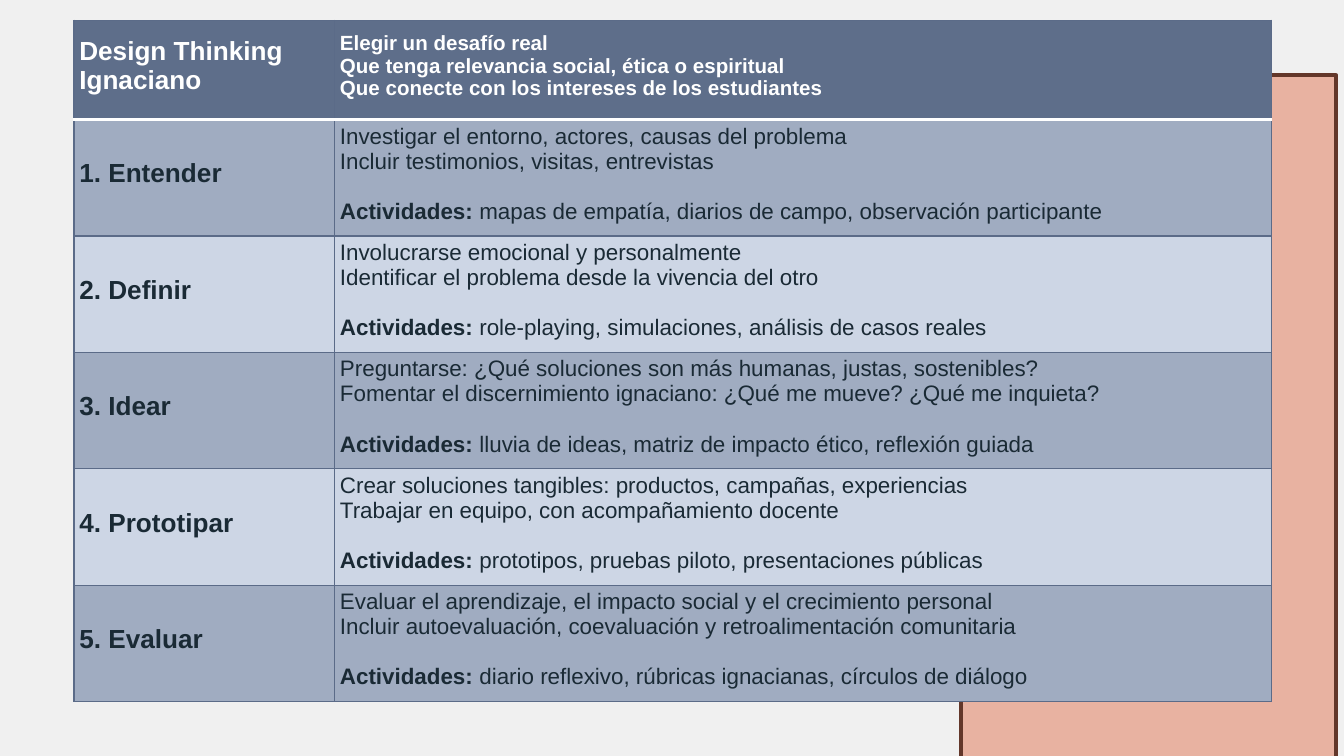
from lxml.etree import SubElement
from pptx import Presentation
from pptx.dml.color import RGBColor
from pptx.enum.shapes import MSO_SHAPE
from pptx.enum.text import MSO_ANCHOR
from pptx.oxml.ns import qn
from pptx.util import Inches, Pt

HEADER = ("Design Thinking Ignaciano", [
    "Elegir un desafío real",
    "Que tenga relevancia social, ética o espiritual",
    "Que conecte con los intereses de los estudiantes",
])
# Phase, two guidelines, activities
PHASES = [
    ("1. Entender",
     ["Investigar el entorno, actores, causas del problema",
      "Incluir testimonios, visitas, entrevistas"],
     "mapas de empatía, diarios de campo, observación participante"),
    ("2. Definir",
     ["Involucrarse emocional y personalmente",
      "Identificar el problema desde la vivencia del otro"],
     "role-playing, simulaciones, análisis de casos reales"),
    ("3. Idear",
     ["Preguntarse: ¿Qué soluciones son más humanas, justas, sostenibles?",
      "Fomentar el discernimiento ignaciano: ¿Qué me mueve? ¿Qué me inquieta?"],
     "lluvia de ideas, matriz de impacto ético, reflexión guiada"),
    ("4. Prototipar",
     ["Crear soluciones tangibles: productos, campañas, experiencias",
      "Trabajar en equipo, con acompañamiento docente"],
     "prototipos, pruebas piloto, presentaciones públicas"),
    ("5. Evaluar",
     ["Evaluar el aprendizaje, el impacto social y el crecimiento personal",
      "Incluir autoevaluación, coevaluación y retroalimentación comunitaria"],
     "diario reflexivo, rúbricas ignacianas, círculos de diálogo"),
]


def rgb(value):
    return RGBColor.from_string(value)


def add_text(p, text, size=12, color="1A2A35", bold=False, font="Arial"):
    r = p.add_run()
    r.text = text
    r.font.name, r.font.size, r.font.bold = font, Pt(size), bold
    r.font.color.rgb = rgb(color)


class Deck:
    BACKGROUND, HEAD, WHITE = "F0F0F0", "5E6E8A", "FFFFFF"
    BANDS = ("A0ACC1", "CDD6E5")
    GRID = ("5B6B88", 0.75)
    RULE = (WHITE, 2)

    def __init__(self, width, height):
        self.prs = Presentation()
        self.prs.slide_width, self.prs.slide_height = Inches(width), Inches(height)
        self.s = self.prs.slides.add_slide(self.prs.slide_layouts[6])
        fill = self.s.background.fill
        fill.solid()
        fill.fore_color.rgb = rgb(self.BACKGROUND)

    def panel(self, x, y, w, h, fill, opacity, line, width):
        sp = self.s.shapes.add_shape(MSO_SHAPE.PARALLELOGRAM,
                                     Inches(x), Inches(y), Inches(w), Inches(h))
        sp.adjustments[0] = 0
        sp.shadow.inherit = False
        sp.fill.solid()
        sp.fill.fore_color.rgb = rgb(fill)
        color = sp.fill._xPr.find(qn("a:solidFill"))[0]
        SubElement(color, qn("a:alpha"), val=str(opacity * 1000))
        sp.line.color.rgb = rgb(line)
        sp.line.width = Pt(width)

    def table(self, x, y, cols, rows):
        table = self.s.shapes.add_table(len(rows), len(cols), Inches(x), Inches(y),
                                        Inches(sum(cols)), Inches(sum(rows))).table
        for column, width in zip(table.columns, cols):
            column.width = Inches(width)
        for row, height in zip(table.rows, rows):
            row.height = Inches(height)
        return table

    def cell(self, cell, fill, top=GRID, bottom=GRID):
        cell.vertical_anchor = MSO_ANCHOR.MIDDLE
        cell.margin_left = cell.margin_right = Inches(0.04)
        cell.margin_top, cell.margin_bottom = Inches(0.03), Inches(0.09)
        tc_pr = cell._tc.get_or_add_tcPr()
        borders = {"L": self.GRID, "R": self.GRID, "T": top, "B": bottom}
        for side, (color, width) in borders.items():
            ln = SubElement(tc_pr, qn(f"a:ln{side}"), w=str(Pt(width)))
            SubElement(SubElement(ln, qn("a:solidFill")), qn("a:srgbClr"), val=color)
        cell.fill.solid()
        cell.fill.fore_color.rgb = rgb(fill)

    def lines(self, cell, texts, **style):
        tf = cell.text_frame
        for i, text in enumerate(texts):
            p = tf.add_paragraph() if i else tf.paragraphs[0]
            add_text(p, text, **style)


def main():
    # Widescreen, 16:9
    deck = Deck(10, 10 * 9 / 16)

    # Side panel
    deck.panel(7.15, 0.56, 2.79, 5.67, "E37E5F", 54, "63372A", 2)

    # Table header
    table = deck.table(0.55, 0.15, [1.94, 6.97], [0.74] + [0.86] * len(PHASES))
    title, goals = HEADER
    for col, (texts, size) in enumerate([([title], 14), (goals, 11)]):
        cell = table.cell(0, col)
        deck.cell(cell, deck.HEAD, bottom=deck.RULE)
        deck.lines(cell, texts, size=size, color=deck.WHITE, bold=True)

    # One row per phase
    for row, (phase, guidelines, activities) in enumerate(PHASES, 1):
        name, detail = table.cell(row, 0), table.cell(row, 1)
        for cell in (name, detail):
            deck.cell(cell, deck.BANDS[(row - 1) % 2],
                      top=deck.RULE if row == 1 else deck.GRID)
        deck.lines(name, [phase], size=14, bold=True)
        deck.lines(detail, guidelines)
        p = detail.text_frame.add_paragraph()
        p.space_before = Pt(13.4)
        add_text(p, "Actividades: ", bold=True)
        add_text(p, activities)

    deck.prs.save("out.pptx")


if __name__ == "__main__":
    main()
